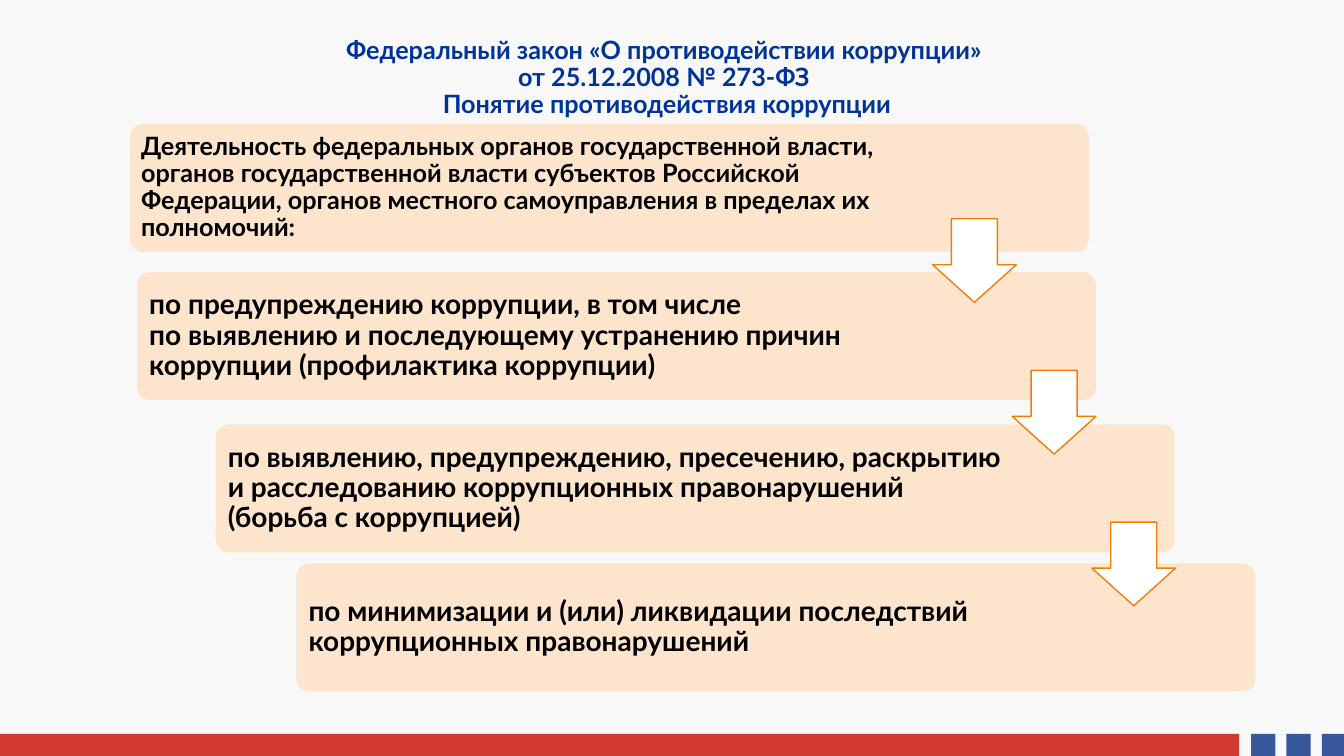
"""Build the slide on the concept of countering corruption."""
from copy import deepcopy

from lxml import etree
from pptx import Presentation
from pptx.dml.color import RGBColor
from pptx.enum.shapes import MSO_SHAPE
from pptx.enum.text import MSO_ANCHOR, MSO_AUTO_SIZE, PP_ALIGN
from pptx.oxml.ns import qn
from pptx.util import Inches, Pt

RECTANGLE = MSO_SHAPE.RECTANGLE
ROUNDED = MSO_SHAPE.ROUNDED_RECTANGLE
DOWN_ARROW = MSO_SHAPE.DOWN_ARROW
MIDDLE = MSO_ANCHOR.MIDDLE
NO_AUTOFIT = MSO_AUTO_SIZE.NONE
CENTER, LEFT = PP_ALIGN.CENTER, PP_ALIGN.LEFT

deck = Presentation()
deck.slide_width, deck.slide_height = Inches(13.33), Inches(7.5)
page = deck.slides.add_slide(deck.slide_layouts[5])
page.background.fill.solid()
page.background.fill.fore_color.rgb = RGBColor.from_string("F8F8F8")


def add_filled(kind, bounds, color):
    shape = page.shapes.add_shape(kind, *map(Inches, bounds))
    shape.shadow.inherit = False
    shape.fill.solid()
    shape.fill.fore_color.rgb = RGBColor.from_string(color)
    shape.line.fill.background()
    return shape


def write(box, text, size, color, align, insets):
    frame = box.text_frame
    left, top, right, bottom = map(Inches, insets)
    frame_format = {
        "text": text, "word_wrap": True, "auto_size": NO_AUTOFIT,
        "vertical_anchor": MIDDLE, "margin_left": left, "margin_top": top,
        "margin_right": right, "margin_bottom": bottom,
    }
    for name, value in frame_format.items():
        setattr(frame, name, value)
    para = frame.paragraphs[0]
    para.alignment, para.line_spacing = align, 0.9
    for span in para.runs:
        for name, value in {"name": "Lato", "size": Pt(size), "bold": True}.items():
            setattr(span.font, name, value)
        span.font.color.rgb = RGBColor.from_string(color)
    for line_break in para._p.findall(qn("a:br")):
        line_break.insert(0, deepcopy(para.runs[0]._r.rPr))


footer_bars = [(0, 12.29, "C70A00")]
footer_bars += [(12.41 + 0.35 * index, 0.24, "0A3085") for index in range(3)]
for left, width, color in footer_bars:
    bar = add_filled(RECTANGLE, (left, 7.28, width, 0.22), color)
    for fill_color in bar.fill._xPr.iter(qn("a:srgbClr")):
        etree.SubElement(fill_color, qn("a:alpha"), val="80000")

title = page.shapes.title
title.left, title.top = Inches(1.01), Inches(0.11)
title.width, title.height = Inches(11.21), Inches(1.61)
write(
    title,
    "Федеральный закон «О противодействии коррупции» \v"
    "от 25.12.2008 № 273-ФЗ \vПонятие противодействия коррупции",
    18, "003399", CENTER, (0.1, 0.05, 0.1, 0.32),
)

cards = [
    (1.29, 1.23, 8.03, 18, 0.07,
     "Деятельность федеральных органов государственной власти, органов "
     "государственной власти субъектов Российской Федерации, органов местного "
     "самоуправления в пределах их полномочий:"),
    (1.36, 2.7, 7.82, 20, 0.08,
     "по предупреждению коррупции, в том числе \vпо выявлению и последующему "
     "устранению причин коррупции (профилактика коррупции)"),
    (2.14, 4.21, 7.83, 20, 0.08,
     "по выявлению, предупреждению, пресечению, раскрытию и расследованию "
     "коррупционных правонарушений (борьба с коррупцией)"),
    (2.94, 5.59, 7.82, 20, 0.08,
     "по минимизации и (или) ликвидации последствий коррупционных правонарушений"),
]
for left, top, text_width, size, inset, text in cards:
    card = add_filled(ROUNDED, (left, top, 9.51, 1.27), "FDE5CD")
    card.adjustments[0] = 0.1
    bounds = (left + 0.04, top + 0.035, text_width, 1.2)
    box = page.shapes.add_textbox(*map(Inches, bounds))
    write(box, text, size, "000000", LEFT, [inset] * 4)

for index in range(3):
    bounds = (9.25 + 0.79 * index, 2.17 + 1.505 * index, 0.83, 0.83)
    arrow = add_filled(DOWN_ARROW, bounds, "FFFFFF")
    arrow.adjustments[0], arrow.adjustments[1] = 0.45, 0.55
    arrow.adjustments[0], arrow.adjustments[1] = 0.55, 0.45
    arrow.line.color.rgb = RGBColor.from_string("F07F09")
    arrow.line.width = Pt(1)

deck.save("out.pptx")
